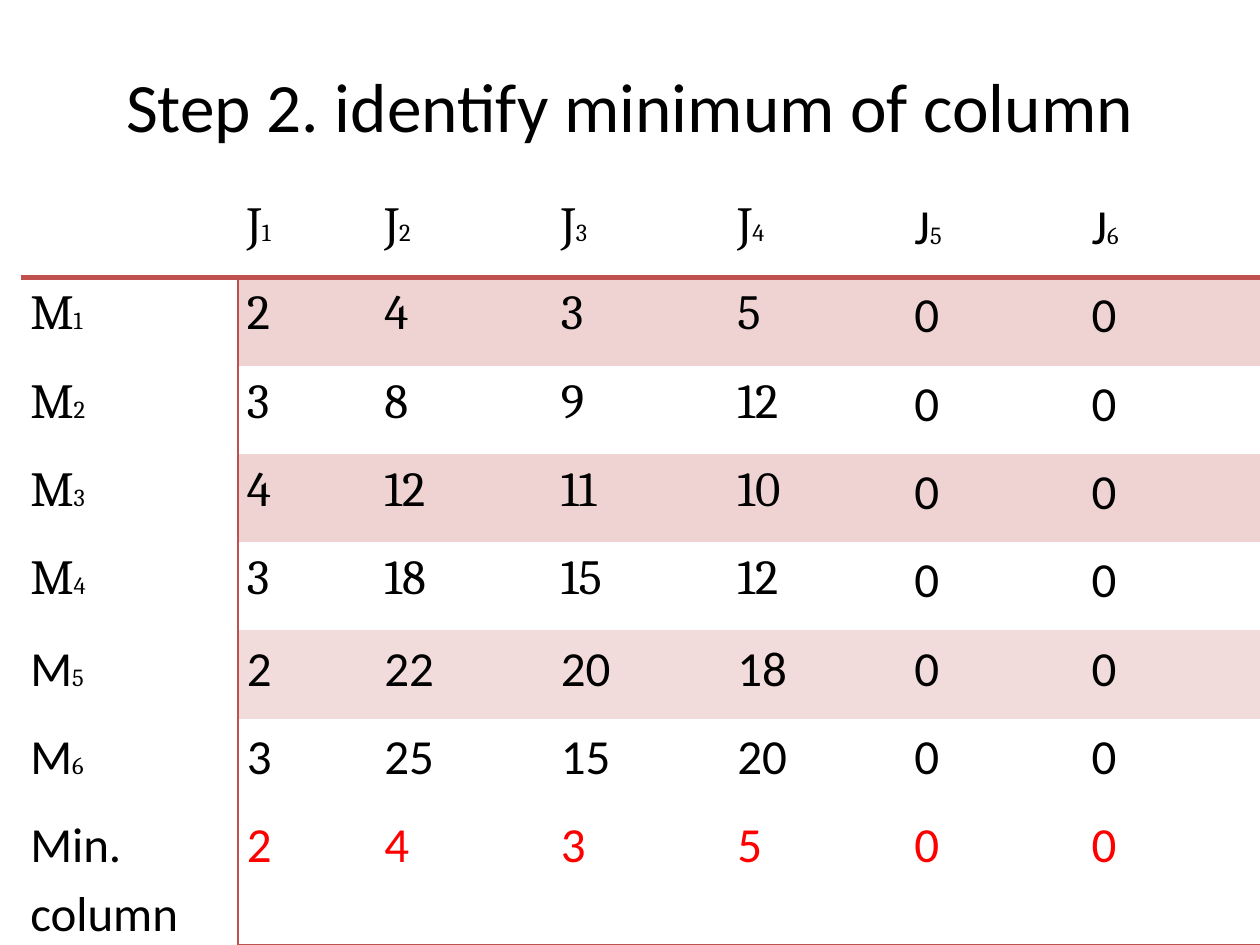
from dataclasses import dataclass

from lxml import etree
from pptx import Presentation
from pptx.dml.color import RGBColor
from pptx.enum.text import MSO_ANCHOR, PP_ALIGN
from pptx.oxml.ns import qn
from pptx.util import Cm, Pt

MIDDLE = MSO_ANCHOR.MIDDLE
TOP = MSO_ANCHOR.TOP
CENTER = PP_ALIGN.CENTER


@dataclass(frozen=True)
class Theme:
    """Hold the colours, fonts and type sizes."""
    ink: str = "000000"
    red: str = "FF0000"
    rule: str = "C0504D"
    white: str = "FFFFFF"
    band: str = "EFD3D2"
    pale: str = "F2DCDB"
    sans: str = "Calibri"
    serif: str = "Cambria"
    title: float = 39.6
    body: float = 28
    small: float = 14
    thick: float = 3
    thin: float = 1


THEME = Theme()
TITLE = "Step 2. identify minimum of column"
COSTS = [
    [2, 4, 3, 5, 0, 0],
    [3, 8, 9, 12, 0, 0],
    [4, 12, 11, 10, 0, 0],
    [3, 18, 15, 12, 0, 0],
    [2, 22, 20, 18, 0, 0],
    [3, 25, 15, 20, 0, 0],
]
LEAST = [min(col) for col in zip(*COSTS)]
GRID = [
    [""] + [f"J{n}" for n in range(1, 7)],
    *([f"M{n}", *row] for n, row in enumerate(COSTS, 1)),
    ["Min. column", *LEAST],
]
LAST = len(GRID) - 1
SERIF_END = 4
WIDTHS = [4.37, 2.77, 3.56, 3.56, 3.57, 3.57, 3.57]


def assign(item, values):
    """Set each named value on the item."""
    for name, value in values.items():
        setattr(item, name, value)


def add_run(para, text, font, size, color):
    """Add one run of styled text."""
    run = para.add_run()
    run.text = text
    assign(run.font, {"name": font, "size": Pt(size), "bold": False})
    run.font.color.rgb = RGBColor.from_string(color)


def add_edge(cell, side, width):
    """Draw one cell border, or clear it at zero width."""
    line = etree.SubElement(cell._tc.get_or_add_tcPr(), qn(f"a:ln{side}"))
    line.set("w", str(Pt(width)))
    if width:
        fill = etree.SubElement(line, qn("a:solidFill"))
        etree.SubElement(fill, qn("a:srgbClr"), val=THEME.rule)
    else:
        etree.SubElement(line, qn("a:noFill"))


def edge_widths(row, col):
    """Give the border widths of a cell by side."""
    foot = THEME.thin if row == LAST and col else 0
    return {
        "L": THEME.thin if row and col == 1 else 0,
        "R": THEME.thin if row and col == 0 else 0,
        "T": THEME.thick if row == 1 else 0,
        "B": THEME.thick if row == 0 else foot,
    }


def pick_fill(row, col):
    """Choose the fill of a cell, or None for a clear one."""
    if row == 0 or col == 0:
        return THEME.white
    if row % 2 and row < LAST:
        return THEME.band if row <= SERIF_END else THEME.pale
    return None


def fill_cell(cell, row, col):
    """Write and style one cell of the cost table."""
    assign(cell, {
        "margin_left": Cm(0.18), "margin_right": Cm(0.18),
        "margin_top": 0, "margin_bottom": 0, "vertical_anchor": TOP,
    })
    for side, width in edge_widths(row, col).items():
        add_edge(cell, side, width)
    tint = pick_fill(row, col)
    if tint:
        cell.fill.solid()
        cell.fill.fore_color.rgb = RGBColor.from_string(tint)
    else:
        cell.fill.background()

    text = str(GRID[row][col])
    if not text:
        return
    para = cell.text_frame.paragraphs[0]
    para.line_spacing = 1.15
    font = THEME.serif if max(row, col) <= SERIF_END else THEME.sans
    color = THEME.red if row == LAST and col else THEME.ink
    index = text[0] in "JM" and text[1:].isdigit()
    add_run(para, text[0] if index else text, font, THEME.body, color)
    if index:
        add_run(para, text[1:], THEME.serif, THEME.small, color)


def place_title(slide, left, top, width, height):
    """Place and style the title in its box."""
    shape = slide.shapes.title
    assign(shape, {"left": left, "top": top, "width": width, "height": height})
    assign(shape.text_frame, {"vertical_anchor": MIDDLE, "word_wrap": True})
    para = shape.text_frame.paragraphs[0]
    para.alignment = CENTER
    add_run(para, TITLE, THEME.sans, THEME.title, THEME.ink)


def place_table(slide, left, top, width, height):
    """Place the cost table in its box."""
    frame = slide.shapes.add_table(
        len(GRID), len(WIDTHS), left, top, width, height)
    table = frame.table
    assign(table, {"first_row": False, "horz_banding": False})
    for col, size in enumerate(WIDTHS):
        table.columns[col].width = int(width * size / sum(WIDTHS))
    for row in range(len(GRID)):
        for col in range(len(WIDTHS)):
            fill_cell(table.cell(row, col), row, col)


def main():
    """Build the slide and save it."""
    deck = Presentation()
    assign(deck, {"slide_width": Cm(25.4), "slide_height": Cm(19.05)})
    slide = deck.slides.add_slide(deck.slide_layouts[5])
    place_title(slide, Cm(0.85), Cm(1.06), Cm(23.7), Cm(2.12))
    place_table(slide, Cm(0.43), Cm(3.81), Cm(24.97), Cm(14.24))
    deck.save("out.pptx")


if __name__ == "__main__":
    main()
